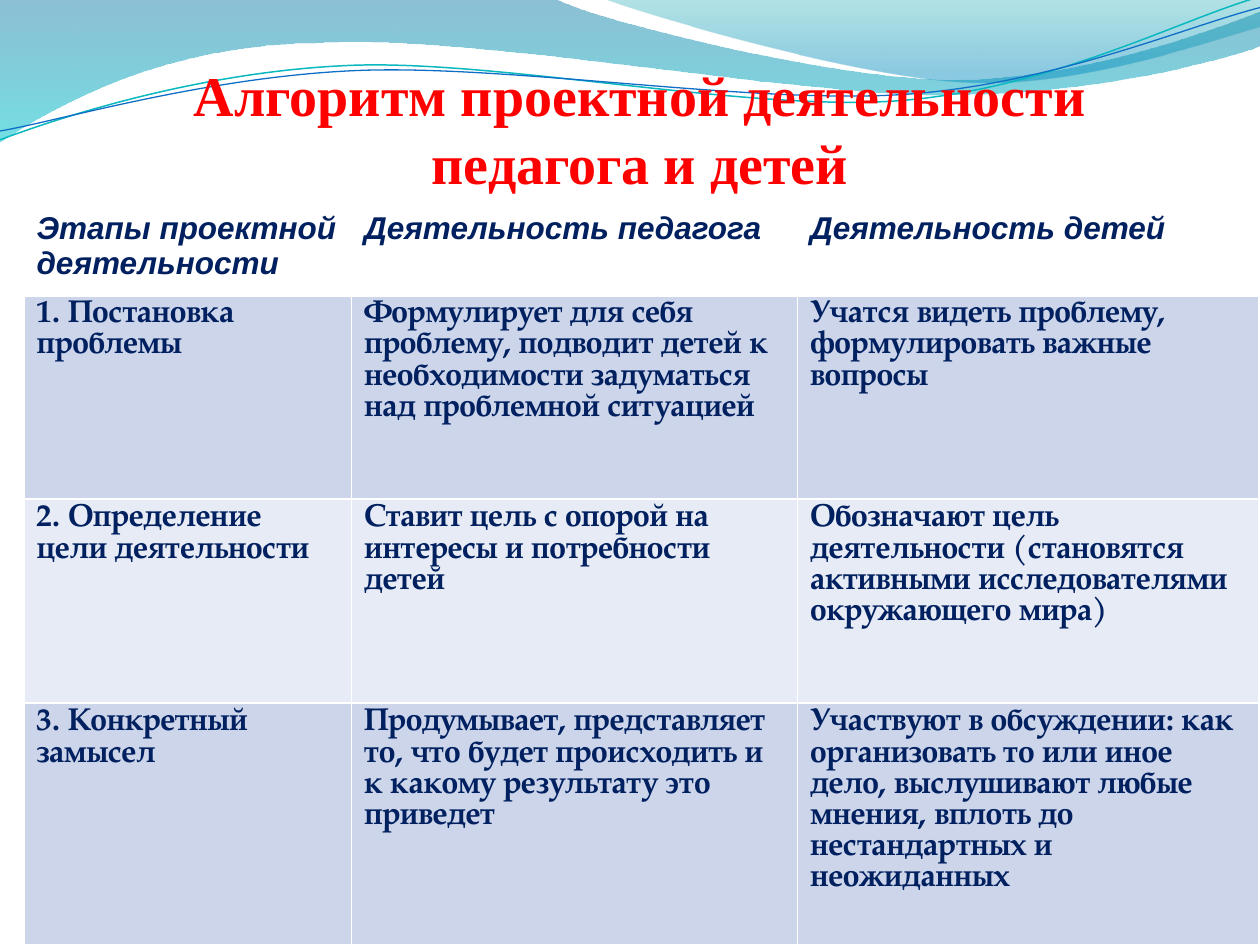
import math
from dataclasses import dataclass

from lxml import etree
from pptx import Presentation
from pptx import util as u
from pptx.dml import color
from pptx.enum import text
from pptx.oxml import ns


@dataclass(frozen=True)
class Theme:
    """Colours, fonts and type sizes of the slide."""
    title: str = "FF0000"
    ink: str = "002060"
    border: str = "FFFFFF"
    header_fill: str = "FFFFFF"
    bands: tuple = ("CCD5EA", "E7EBF5")
    title_font: str = "Times New Roman"
    header_font: str = "Arial"
    body_font: str = "TeX Gyre Pagella"
    title_size: float = 32
    table_size: float = 18
    body_leading: float = 17.8


def rgb(value):
    """Turn a hex string into a colour."""
    return color.RGBColor.from_string(value)


def turn(point, box, degrees):
    """Rotate a point clockwise about the centre of a box."""
    left, top, width, height = box
    centre_x, centre_y = left + width / 2, top + height / 2
    x, y = point[0] - centre_x, point[1] - centre_y
    cosine, sine = math.cos(math.radians(degrees)), math.sin(math.radians(degrees))
    return centre_x + x * cosine - y * sine, centre_y + x * sine + y * cosine


class SlideBuilder:
    """Draw styled elements on the current slide."""

    def __init__(self, slide, theme):
        """Keep the slide and its theme."""
        self.slide = slide
        self.theme = theme

    def place(self, shape, box):
        """Move and size a shape in inches."""
        for name, value in zip(("left", "top", "width", "height"), box):
            setattr(shape, name, u.Inches(value))

    def format_text(self, paragraph, hue, font_format):
        """Apply a colour and a dict of font values."""
        for name, value in font_format.items():
            setattr(paragraph.font, name, value)
        paragraph.font.color.rgb = rgb(hue)

    def outline(self, box, start, segments, close, rotation=0):
        """Draw a freeform of lines and cubic curves in a box."""
        corners = [start] + [point for segment in segments for point in segment]
        points = [tuple(u.Inches(value) for value in turn(corner, box, -rotation))
                  for corner in corners]
        builder = self.slide.shapes.build_freeform(*points[0])
        builder.add_line_segments(points[1:], close=close)
        shape = builder.convert_to_shape()
        shape.shadow.inherit = False
        self.place(shape, box)
        shape.rotation = rotation
        outline = next(shape.element.iter(ns.qn("a:path")))
        outline.set("w", str(shape.width))
        outline.set("h", str(shape.height))
        for element, (x, y) in zip(outline.iter(ns.qn("a:pt")), points):
            element.set("x", str(x - shape.left))
            element.set("y", str(y - shape.top))
        lines = iter(outline.findall(ns.qn("a:lnTo")))
        for segment in segments:
            pieces = [next(lines) for _ in segment]
            if len(pieces) == 3:
                curve = etree.Element(ns.qn("a:cubicBezTo"))
                pieces[0].addprevious(curve)
                for piece in pieces:
                    curve.append(piece[0])
                    outline.remove(piece)
        return shape

    def wave(self, box, start, segments, stops):
        """Draw a wave with a see-through vertical gradient."""
        shape = self.outline(box, start, segments, True)
        shape.line.fill.background()
        shape.fill.gradient()
        shape.fill.gradient_angle = 270
        for stop, (position, hue, _) in zip(shape.fill.gradient_stops, stops):
            stop.position = position
            stop.color.rgb = rgb(hue)
        for element, (_, _, opacity) in zip(shape.element.spPr.iter(ns.qn("a:srgbClr")), stops):
            etree.SubElement(element, ns.qn("a:alpha"), val=str(opacity * 1000))

    def ripple(self, box, start, segments, hue, width):
        """Draw a thin tilted curve."""
        shape = self.outline(box, start, segments, False, 357.3)
        shape.fill.background()
        shape.line.color.rgb = rgb(hue)
        shape.line.width = u.Pt(width)

    def title(self, wording, box):
        """Fill the title placeholder and bring it to the front."""
        shape = self.slide.shapes.title
        self.place(shape, box)
        frame = shape.text_frame
        frame.text = wording
        settings = dict(margin_left=0, margin_right=0, margin_top=0, margin_bottom=0,
                        word_wrap=True, auto_size=text.MSO_AUTO_SIZE.NONE,
                        vertical_anchor=text.MSO_ANCHOR.BOTTOM)
        for name, value in settings.items():
            setattr(frame, name, value)
        paragraph = frame.paragraphs[0]
        paragraph.alignment = text.PP_ALIGN.CENTER
        self.format_text(paragraph, self.theme.title, dict(
            name=self.theme.title_font, size=u.Pt(self.theme.title_size), bold=True))
        self.slide.shapes._spTree.append(shape.element)

    def borders(self, cell, widths):
        """Draw the four borders of a cell."""
        properties = cell._tc.get_or_add_tcPr()
        for index, (side, width) in enumerate(widths.items()):
            line = etree.Element(ns.qn(f"a:ln{side}"), w=str(u.Pt(width)))
            fill = etree.SubElement(line, ns.qn("a:solidFill"))
            etree.SubElement(fill, ns.qn("a:srgbClr"), val=self.theme.border)
            properties.insert(index, line)

    def table(self, rows, left, top, column_widths, row_heights):
        """Draw a table with a header row and banded body."""
        theme = self.theme
        table = self.slide.shapes.add_table(
            len(rows), len(column_widths), u.Inches(left), u.Inches(top),
            u.Inches(sum(column_widths)), u.Inches(sum(row_heights))).table
        for column, width in zip(table.columns, column_widths):
            column.width = u.Inches(width)
        for index, (row, height, wordings) in enumerate(zip(table.rows, row_heights, rows)):
            row.height = u.Inches(height)
            header = index == 0
            font_format = dict(name=theme.header_font if header else theme.body_font,
                               size=u.Pt(theme.table_size), bold=True, italic=header)
            widths = dict(L=1, R=1, T=3 if index == 1 else 1, B=3 if header else 1)
            for cell, wording in zip(row.cells, wordings):
                cell.text = wording
                cell.fill.solid()
                cell.fill.fore_color.rgb = rgb(
                    theme.header_fill if header else theme.bands[(index - 1) % 2])
                self.borders(cell, widths)
                paragraph = cell.text_frame.paragraphs[0]
                self.format_text(paragraph, theme.ink, font_format)
                if not header:
                    cell.margin_top = u.Inches(0.04)
                    paragraph.line_spacing = u.Pt(theme.body_leading)


WAVES = [
    ((-0.01, -0.01, 10.02, 1.14), (0, -0.01),
     [((4.4, -0.01),),
      ((4.76, 0.17), (6.64, 0.63), (7.58, 0.63)),
      ((8.53, 0.63), (9.58, 0.26), (10, 0.09)),
      ((10.01, 0.36),),
      ((9.83, 0.44), (8.7, 0.76), (7.46, 0.75)),
      ((6.22, 0.75), (3.82, 0.28), (2.57, 0.34)),
      ((1.29, 0.35), (0.46, 0.83), (-0.01, 1.13))],
     [(0, "0074A1", 45), (1, "00C6CF", 55)]),
    ((4.79, -0.01, 5.21, 0.7), (4.79, -0.01),
     [((5.09, 0.11), (6.82, 0.62), (7.69, 0.65)),
      ((8.56, 0.69), (9.61, 0.32), (10, 0.21)),
      ((10, 0),)],
     [(0, "00A1A9", 30), (0.8, "008BBF", 45)]),
]
RIPPLES = [
    ((-0.02, 0.22, 10.02, 0.71), (0, 1.11),
     [((0.48, 0.93), (1.58, 0.57), (2.77, 0.52)),
      ((3.95, 0.47), (5.93, 0.89), (7.13, 0.8)),
      ((8.33, 0.71), (9.38, 0.15), (9.98, -0.02))], "0AB8BF", 0.85),
    ((-0.02, 0.3, 10.03, 0.58), (0, 1.04),
     [((0.47, 0.96), (1.64, 0.61), (2.83, 0.56)),
      ((4.03, 0.51), (5.97, 0.83), (7.17, 0.75)),
      ((8.36, 0.67), (9.41, 0.21), (10, 0.06))], "0F6FC6", 0.75),
]
STAGES = [
    ("Этапы проектной деятельности", "Деятельность педагога", "Деятельность детей"),
    ("1. Постановка проблемы",
     "Формулирует для себя проблему, подводит детей к необходимости задуматься "
     "над проблемной ситуацией",
     "Учатся видеть проблему, формулировать важные вопросы"),
    ("2. Определение цели деятельности", "Ставит цель с опорой на интересы и потребности детей",
     "Обозначают цель деятельности (становятся активными исследователями окружающего мира)"),
    ("3. Конкретный замысел",
     "Продумывает, представляет то, что будет происходить и к какому результату это приведет",
     "Участвуют в обсуждении: как организовать то или иное дело, выслушивают любые мнения, "
     "вплоть до нестандартных и неожиданных"),
]


def main():
    """Build and save the presentation."""
    presentation = Presentation()
    presentation.slide_width, presentation.slide_height = u.Inches(10), u.Inches(7.5)
    slide = presentation.slides.add_slide(presentation.slide_layouts[5])
    builder = SlideBuilder(slide, Theme())
    for wave in WAVES:
        builder.wave(*wave)
    for ripple in RIPPLES:
        builder.ripple(*ripple)
    builder.table(STAGES, 0.19, 1.62, (2.6, 3.54, 3.66), (0.72, 1.62, 1.62, 1.92))
    builder.title("Алгоритм проектной деятельности педагога и детей", (0.67, 0.44, 8.82, 1.11))
    presentation.save("out.pptx")


if __name__ == "__main__":
    main()
